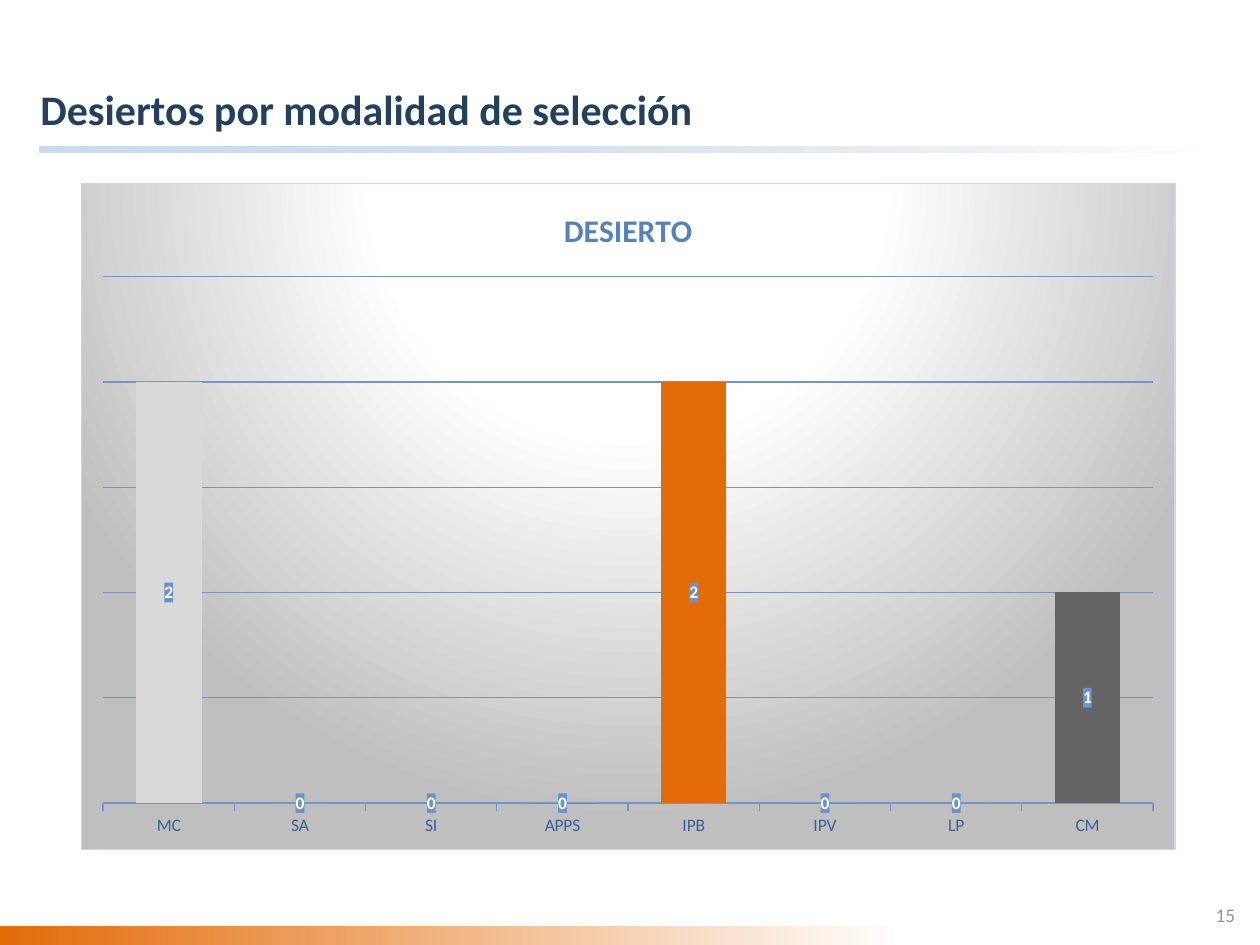
from pptx import Presentation
from pptx.chart.data import CategoryChartData
from pptx.dml.color import RGBColor
from pptx.enum.chart import XL_CHART_TYPE as ChartType, XL_LABEL_POSITION as LabelPosition
from pptx.enum.chart import XL_TICK_LABEL_POSITION as TickLabels, XL_TICK_MARK as TickMark
from pptx.enum.shapes import MSO_SHAPE as Shape
from pptx.enum.text import MSO_ANCHOR as Anchor, PP_ALIGN as Align
from pptx.oxml import parse_xml
from pptx.oxml.ns import nsdecls, qn
from pptx.util import Inches, Pt

WHITE = RGBColor(0xFF, 0xFF, 0xFF)
NAVY = RGBColor(0x24, 0x40, 0x61)
SKY = RGBColor(0x9A, 0xB7, 0xD9)
ORANGE = RGBColor(0xE3, 0x6C, 0x09)
GREY = RGBColor(0x8E, 0x93, 0x9E)
AXIS_TEXT = RGBColor(0x38, 0x62, 0x95)
CHART_TITLE = RGBColor(0x53, 0x82, 0xBF)
LABEL_FILL = RGBColor(0x6A, 0x93, 0xCB)
RULE = RGBColor(0x77, 0x95, 0xC4)
CHART_BORDER = RGBColor(0xC8, 0xD7, 0xEA)
CHART_EDGE = RGBColor(0xBF, 0xBF, 0xBF)
FONT = "Calibri"

MODALITIES = {
    "MC": (2, RGBColor(0xD9, 0xD9, 0xD9)),
    "SA": (None, RGBColor(0xA6, 0xA6, 0xA6)),
    "SI": (None, RGBColor(0x7F, 0x7F, 0x7F)),
    "APPS": (None, RGBColor(0x42, 0x42, 0x42)),
    "IPB": (2, ORANGE),
    "IPV": (None, RGBColor(0x36, 0x60, 0x92)),
    "LP": (None, RGBColor(0x82, 0x82, 0x82)),
    "CM": (1, RGBColor(0x64, 0x64, 0x64)),
}


def style_font(font, size, color, bold=False):
    for name, value in {"name": FONT, "size": Pt(size), "bold": bold}.items():
        setattr(font, name, value)
    font.color.rgb = color


deck = Presentation()
deck.slide_width, deck.slide_height = Inches(10), Inches(7.5)
page = deck.slides.add_slide(deck.slide_layouts[5])

for left, top, width, height, color, opacity in (
    (0.31, 1.16, 9.39, 0.05, SKY, 50),
    (0, 7.35, 7.19, 0.15, ORANGE, 100),
):
    band = page.shapes.add_shape(
        Shape.RECTANGLE, Inches(left), Inches(top), Inches(width), Inches(height))
    band.shadow.inherit = False
    band.line.fill.background()
    band.fill.gradient()
    band.fill.gradient_angle = 0
    for stop, stop_color in zip(band.fill.gradient_stops, (color, WHITE)):
        stop.color.rgb = stop_color
    start_color = band.fill._xPr.find(".//" + qn("a:srgbClr"))
    start_color.append(parse_xml(f'<a:alpha {nsdecls("a")} val="{opacity * 1000}"/>'))

title = page.shapes.title
number = page.shapes.add_textbox(Inches(9.49), Inches(7.06), Inches(0.47), Inches(0.4))
title.left, title.top, title.width, title.height = (
    Inches(0.32), Inches(0.59), Inches(9.4), Inches(0.86))
for box, text, anchor, align, size, color, bold in (
    (title, "Desiertos por modalidad de selección", Anchor.BOTTOM, Align.LEFT, 24, NAVY, True),
    (number, "15", Anchor.MIDDLE, Align.CENTER, 11, GREY, False),
):
    frame = box.text_frame
    frame.word_wrap = True
    frame.vertical_anchor = anchor
    para = frame.paragraphs[0]
    para.alignment = align
    span = para.add_run()
    span.text = text
    style_font(span.font, size, color, bold)
for side, margin in {"left": 0, "right": 0, "top": 0, "bottom": 0.39}.items():
    setattr(title.text_frame, f"margin_{side}", Inches(margin))

chart_data = CategoryChartData()
chart_data.categories = list(MODALITIES)
chart_data.add_series("Series 1", [value for value, color in MODALITIES.values()])
chart = page.shapes.add_chart(
    ChartType.COLUMN_CLUSTERED, Inches(0.64), Inches(1.45), Inches(8.69), Inches(5.3),
    chart_data).chart
style_font(chart.font, 10, AXIS_TEXT)
chart.has_legend = False
chart.has_title = True
chart.chart_title.include_in_layout = False
chart_heading = chart.chart_title.text_frame.paragraphs[0].add_run()
chart_heading.text = "DESIERTO"
style_font(chart_heading.font, 18, CHART_TITLE, True)

plot = chart.plots[0]
plot.gap_width = 100
plot.vary_by_categories = False
series = plot.series[0]
series.format.fill.solid()
series.format.fill.fore_color.rgb = MODALITIES["MC"][1]
for index, (value, color) in enumerate(MODALITIES.values()):
    fill = series.points[index].format.fill
    fill.solid()
    fill.fore_color.rgb = color

labels = series.data_labels
labels.show_value = True
labels.position = LabelPosition.CENTER
style_font(labels.font, 10, WHITE, True)
labels._element.find(qn("c:txPr")).addprevious(parse_xml(
    f'<c:spPr {nsdecls("c", "a")}><a:solidFill><a:srgbClr val="{LABEL_FILL}"/>'
    '</a:solidFill></c:spPr>'))

value_axis, category_axis = chart.value_axis, chart.category_axis
for name, value in {"minimum_scale": 0, "maximum_scale": 2.5, "major_unit": 0.5,
                    "has_major_gridlines": True, "visible": False}.items():
    setattr(value_axis, name, value)
category_axis.major_tick_mark = TickMark.OUTSIDE
category_axis.tick_label_position = TickLabels.LOW
for line in (value_axis.major_gridlines.format.line, category_axis.format.line):
    line.color.rgb = RULE
    line.width = Pt(0.75)

chart_space = chart._chartSpace
chart_space.find(".//" + qn("c:dispBlanksAs")).set("val", "zero")
plot_area = chart_space.find(".//" + qn("c:plotArea"))
for layout in plot_area.findall(qn("c:layout")):
    plot_area.remove(layout)
plot_area.insert(0, parse_xml(
    f'<c:layout {nsdecls("c")}><c:manualLayout><c:layoutTarget val="inner"/>'
    '<c:xMode val="edge"/><c:yMode val="edge"/><c:x val="0.02"/><c:y val="0.14"/>'
    '<c:w val="0.96"/><c:h val="0.79"/></c:manualLayout></c:layout>'))
stops = "".join(
    f'<a:gs pos="{position * 1000}"><a:srgbClr val="{color}"/></a:gs>'
    for position, color in ((0, WHITE), (39, WHITE), (100, CHART_EDGE)))
chart_space.find(qn("c:txPr")).addprevious(parse_xml(
    f'<c:spPr {nsdecls("c", "a")}><a:gradFill><a:gsLst>{stops}</a:gsLst>'
    '<a:path path="circle"><a:fillToRect l="50000" t="-80000" r="50000" b="180000"/></a:path>'
    f'</a:gradFill><a:ln w="{Pt(0.75)}"><a:solidFill><a:srgbClr val="{CHART_BORDER}"/>'
    '</a:solidFill></a:ln></c:spPr>'))

deck.save("out.pptx")
